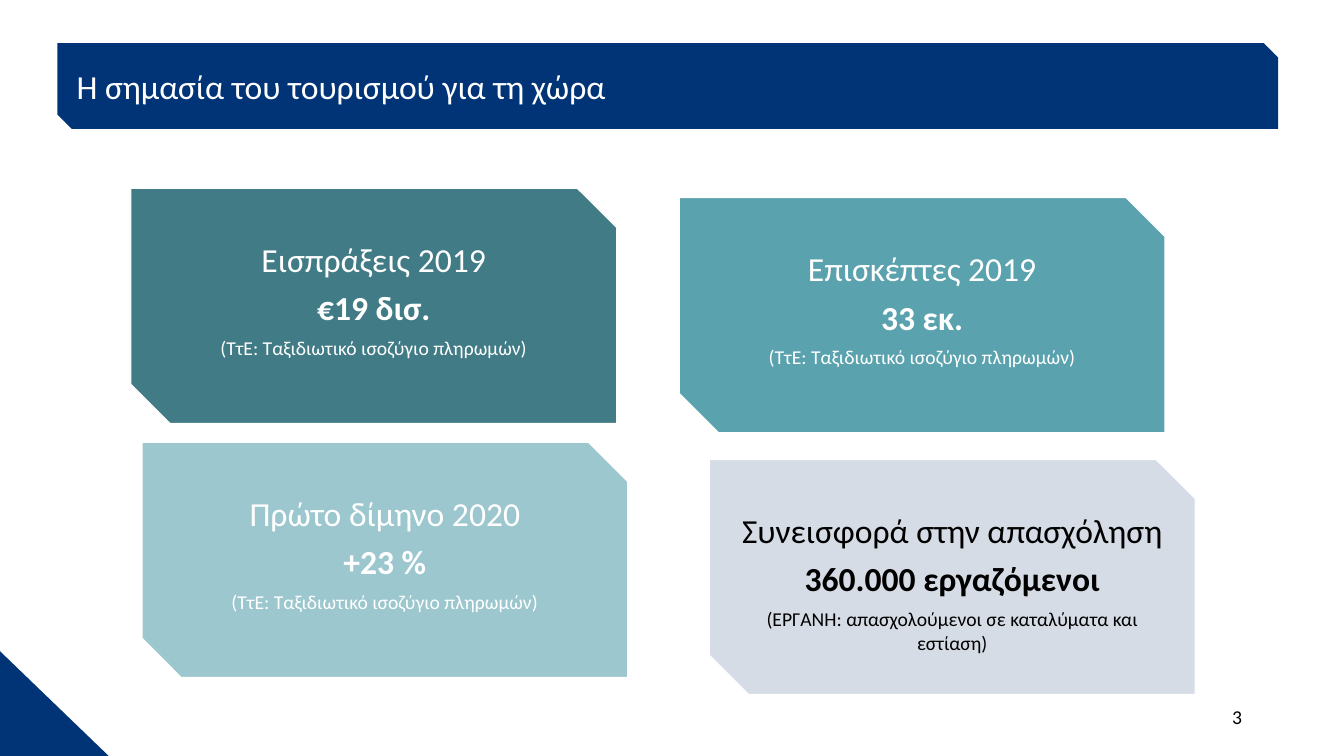
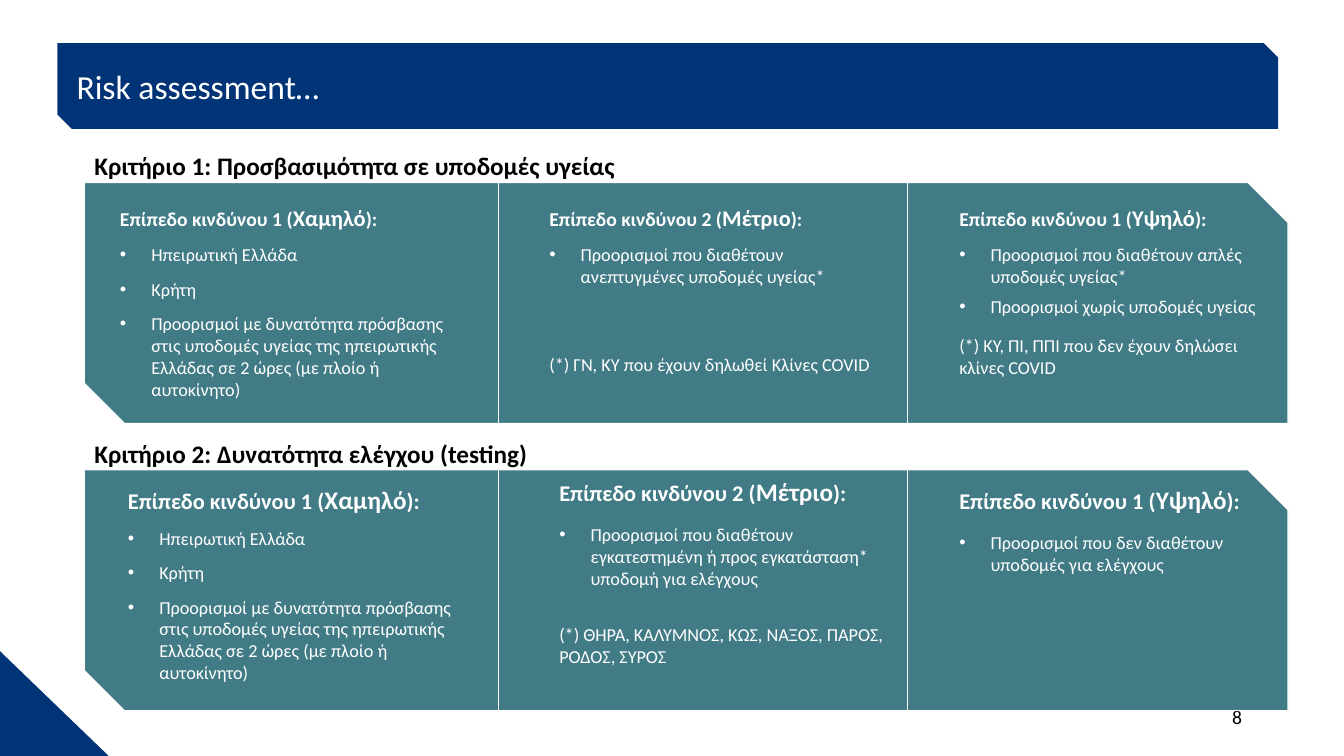
import copy
from dataclasses import dataclass

import lxml.etree
import pptx
import pptx.dml.color
import pptx.enum.shapes
import pptx.enum.text
import pptx.oxml.ns
import pptx.util

Cm = pptx.util.Cm
Pt = pptx.util.Pt
SHAPE = pptx.enum.shapes.MSO_SHAPE
ALIGN = pptx.enum.text.PP_ALIGN
ANCHOR = pptx.enum.text.MSO_ANCHOR
qn = pptx.oxml.ns.qn


@dataclass(frozen=True)
class Theme:
    font: str = "Calibri"
    navy: str = "013476"
    teal: str = "417B85"
    aqua: str = "5AA2AE"
    mist: str = "9CC7CE"
    silver: str = "D6DCE5"
    white: str = "FFFFFF"
    black: str = "000000"
    title: int = 24
    heading: int = 18
    note: int = 14
    item: int = 13


@dataclass(frozen=True)
class Box:
    left: float
    top: float
    width: float
    height: float

    def inner(self, left, top, width, height):
        return Box(self.left + left, self.top + top, width, height)

    def lengths(self):
        return Cm(self.left), Cm(self.top), Cm(self.width), Cm(self.height)


@dataclass(frozen=True)
class Item:
    text: str
    before: int
    after: int
    bullet: bool = True


@dataclass(frozen=True)
class Column:
    left: float
    top: float
    width: float
    level: int
    risk: str
    items: list


THEME = Theme()
BANNER = Box(1.45, 1.09, 30.76, 2.16)
CORNER = Box(0, 16.41, 2.74, 2.64)
NUMBER = Box(23.93, 17.65, 7.62, 1.02)
CARD_SIZE = (12.24, 5.92)
PANEL_SIZE = (30.33, 6.07)
DIVIDERS = (10.44, 20.73)
COLUMN_HEIGHT = 5.6
BULLET_INDENT = 0.79

BALANCE = "(ΤτΕ: Ταξιδιωτικό ισοζύγιο πληρωμών)"
CARDS = [
    (3.3, 4.75, THEME.teal, THEME.white, ["Εισπράξεις 2019", "€19 δισ.", BALANCE]),
    (17.12, 4.98, THEME.aqua, THEME.white, ["Επισκέπτες 2019", "33 εκ.", BALANCE]),
    (3.58, 11.15, THEME.mist, THEME.white, ["Πρώτο δίμηνο 2020", "+23 %", BALANCE]),
    (17.88, 11.58, THEME.silver, THEME.black,
     ["Συνεισφορά στην απασχόληση", "360.000 εργαζόμενοι",
      "(ΕΡΓΑΝΗ: απασχολούμενοι σε καταλύματα και εστίαση)"]),
]

LOW_RISK = [
    Item("Ηπειρωτική Ελλάδα", 3, 6),
    Item("Κρήτη", 3, 6),
    Item("Προορισμοί με δυνατότητα πρόσβασης στις υποδομές υγείας της "
         "ηπειρωτικής Ελλάδας σε 2 ώρες (με πλοίο ή αυτοκίνητο)", 3, 6),
]
PANELS = [
    (4.6, "Κριτήριο 1: Προσβασιμότητα σε υποδομές υγείας", 14, [
        Column(0.64, 0.41, 8.99, 1, "Χαμηλό", LOW_RISK),
        Column(11.46, 0.41, 8.99, 2, "Μέτριο", [
            Item("Προορισμοί που διαθέτουν ανεπτυγμένες υποδομές υγείας*", 3, 3),
            Item("(*) ΓΝ, ΚΥ που έχουν δηλωθεί Κλίνες COVID", 44, 6, False)]),
        Column(21.79, 0.41, 8.13, 1, "Υψηλό", [
            Item("Προορισμοί που διαθέτουν απλές υποδομές υγείας*", 3, 3),
            Item("Προορισμοί χωρίς υποδομές υγείας", 3, 6),
            Item("(*) ΚΥ, ΠΙ, ΠΠΙ που δεν έχουν δηλώσει κλίνες COVID", 6, 6, False)]),
    ]),
    (11.84, "Κριτήριο 2: Δυνατότητα ελέγχου (testing)", 16, [
        Column(0.84, 0.23, 8.99, 1, "Χαμηλό", LOW_RISK),
        Column(11.71, 0.03, 8.99, 2, "Μέτριο", [
            Item("Προορισμοί που διαθέτουν εγκατεστημένη ή προς εγκατάσταση* "
                 "υποδομή για ελέγχους", 6, 3),
            Item("(*) ΘΗΡΑ, ΚΑΛΥΜΝΟΣ, ΚΩΣ, ΝΑΞΟΣ, ΠΑΡΟΣ, ΡΟΔΟΣ, ΣΥΡΟΣ", 22, 6, False)]),
        Column(21.79, 0.23, 8.31, 1, "Υψηλό", [
            Item("Προορισμοί που δεν διαθέτουν υποδομές για ελέγχους", 6, 6)]),
    ]),
]


def rgb(color):
    return pptx.dml.color.RGBColor.from_string(color)


def style_span(span, size, color, bold=False):
    span.font.name = THEME.font
    span.font.size = Pt(size)
    span.font.bold = bold
    span.font.color.rgb = rgb(color)


def space_para(para, before=0, after=0):
    para.space_before = Pt(before)
    para.space_after = Pt(after)


def set_bullet(para, bullet):
    indent = Cm(BULLET_INDENT) if bullet else 0
    properties = para._p.get_or_add_pPr()
    properties.set("marL", str(indent))
    properties.set("indent", str(-indent))
    if bullet:
        lxml.etree.SubElement(properties, qn("a:buFont")).set("typeface", "Arial")
        lxml.etree.SubElement(properties, qn("a:buChar")).set("char", "•")
    else:
        lxml.etree.SubElement(properties, qn("a:buNone"))


def place(shape, box):
    shape.left, shape.top, shape.width, shape.height = box.lengths()


def set_margins(frame, left, top, right, bottom):
    frame.margin_left, frame.margin_top = Cm(left), Cm(top)
    frame.margin_right, frame.margin_bottom = Cm(right), Cm(bottom)


def add_block(page, kind, box, fill, line=None):
    block = page.shapes.add_shape(kind, *box.lengths())
    block.shadow.inherit = False
    block.fill.solid()
    block.fill.fore_color.rgb = rgb(fill)
    if line:
        block.line.color.rgb = rgb(line)
        block.line.width = Pt(0.75)
    else:
        block.line.fill.background()
    return block


def add_label(page, box, text, size, align=ALIGN.LEFT, bold=False):
    frame = page.shapes.add_textbox(*box.lengths()).text_frame
    frame.word_wrap = True
    frame.text = text
    para = frame.paragraphs[0]
    para.alignment = align
    style_span(para.runs[0], size, THEME.black, bold)


def add_divider(page, box):
    left, top, width, height = box.lengths()
    divider = page.shapes.add_connector(
        pptx.enum.shapes.MSO_CONNECTOR.STRAIGHT, left, top, left + width, top + height)
    divider.line.color.rgb = rgb(THEME.white)
    divider.line.width = Pt(0.5)
    lxml.etree.SubElement(divider._element.spPr, qn("a:effectLst"))


def decorate_master(deck, page):
    blocks = [add_block(page, SHAPE.RIGHT_TRIANGLE, CORNER, THEME.navy),
              add_block(page, SHAPE.SNIP_2_DIAG_RECTANGLE, BANNER, THEME.navy)]
    for position, block in enumerate(blocks, start=2):
        block._element.nvSpPr.cNvPr.set("id", str(100 + position))
        deck.slide_master.shapes._spTree.insert(position, block._element)


def repeat_body(layout, count):
    body = next(shape for shape in layout.placeholders
                if shape.placeholder_format.idx == 1)
    for number in range(1, count):
        element = copy.deepcopy(body._element)
        element.nvSpPr.cNvPr.set("id", str(100 + number))
        element.xpath(".//p:ph")[0].set("idx", str(20 + number))
        layout.shapes._spTree.append(element)


def fill_frame(page, title, number):
    place(page.shapes.title, BANNER)
    frame = page.shapes.title.text_frame
    frame.text = title
    frame.word_wrap = True
    frame.auto_size = pptx.enum.text.MSO_AUTO_SIZE.NONE
    frame.vertical_anchor = ANCHOR.MIDDLE
    set_margins(frame, 0.48, 0.05, 0.48, 0.05)
    para = frame.paragraphs[0]
    para.alignment = ALIGN.LEFT
    style_span(para.runs[0], THEME.title, THEME.white)
    add_label(page, NUMBER, str(number), THEME.note, ALIGN.RIGHT)


def add_card(page, box, fill, color, lines):
    card = add_block(page, SHAPE.SNIP_2_DIAG_RECTANGLE, box, fill, THEME.white)
    frame = card.text_frame
    frame.word_wrap = True
    frame.vertical_anchor = ANCHOR.TOP
    set_margins(frame, 0.1, 0.77, 0.1, 0)
    frame.text = "\n".join(lines)
    styles = [(THEME.title, False, 6), (THEME.title, True, 6), (THEME.note, False, 0)]
    for para, (size, bold, after) in zip(frame.paragraphs, styles):
        para.alignment = ALIGN.CENTER
        space_para(para, after=after)
        style_span(para.runs[0], size, color, bold)


def fill_column(body, box, column, size):
    place(body, box)
    frame = body.text_frame
    frame.word_wrap = True
    frame.auto_size = pptx.enum.text.MSO_AUTO_SIZE.NONE
    frame.vertical_anchor = ANCHOR.TOP
    heading = frame.paragraphs[0]
    space_para(heading, after=6)
    set_bullet(heading, False)
    parts = [(f"Επίπεδο κινδύνου {column.level} (", size),
             (column.risk, size + 2), ("):", size)]
    for text, part_size in parts:
        span = heading.add_run()
        span.text = text
        style_span(span, part_size, THEME.white, True)
    for item in column.items:
        para = frame.add_paragraph()
        para.text = item.text
        space_para(para, item.before, item.after)
        set_bullet(para, item.bullet)
        style_span(para.runs[0], THEME.item, THEME.white)


def add_panel(page, box, heading):
    add_block(page, SHAPE.SNIP_2_DIAG_RECTANGLE, box, THEME.teal, THEME.white)
    add_label(page, box.inner(0, -0.93, 15.37, 1.02), heading, THEME.heading, bold=True)
    for offset in DIVIDERS:
        add_divider(page, box.inner(offset, 0, 0, box.height))


def build_cards_page(page):
    fill_frame(page, "Η σημασία του τουρισμού για τη χώρα", 3)
    for left, top, fill, color, lines in CARDS:
        add_card(page, Box(left, top, *CARD_SIZE), fill, color, lines)


def build_risk_page(page):
    bodies = [shape for shape in page.placeholders if shape.placeholder_format.idx > 0]
    remaining = iter(bodies)
    fill_frame(page, "Risk assessment…", 8)
    for top, heading, size, columns in PANELS:
        panel = Box(2.13, top, *PANEL_SIZE)
        add_panel(page, panel, heading)
        for column in columns:
            body = next(remaining)
            box = panel.inner(column.left, column.top, column.width, COLUMN_HEIGHT)
            fill_column(body, box, column, size)
            page.shapes._spTree.append(body._element)


def main():
    deck = pptx.Presentation()
    deck.slide_width, deck.slide_height = Cm(33.87), Cm(19.05)
    content_layout, title_layout = deck.slide_layouts[1], deck.slide_layouts[5]
    repeat_body(content_layout, sum(len(columns) for *_, columns in PANELS))
    cards_page = deck.slides.add_slide(title_layout)
    decorate_master(deck, cards_page)
    build_cards_page(cards_page)
    build_risk_page(deck.slides.add_slide(content_layout))
    deck.save("out.pptx")


if __name__ == "__main__":
    main()
